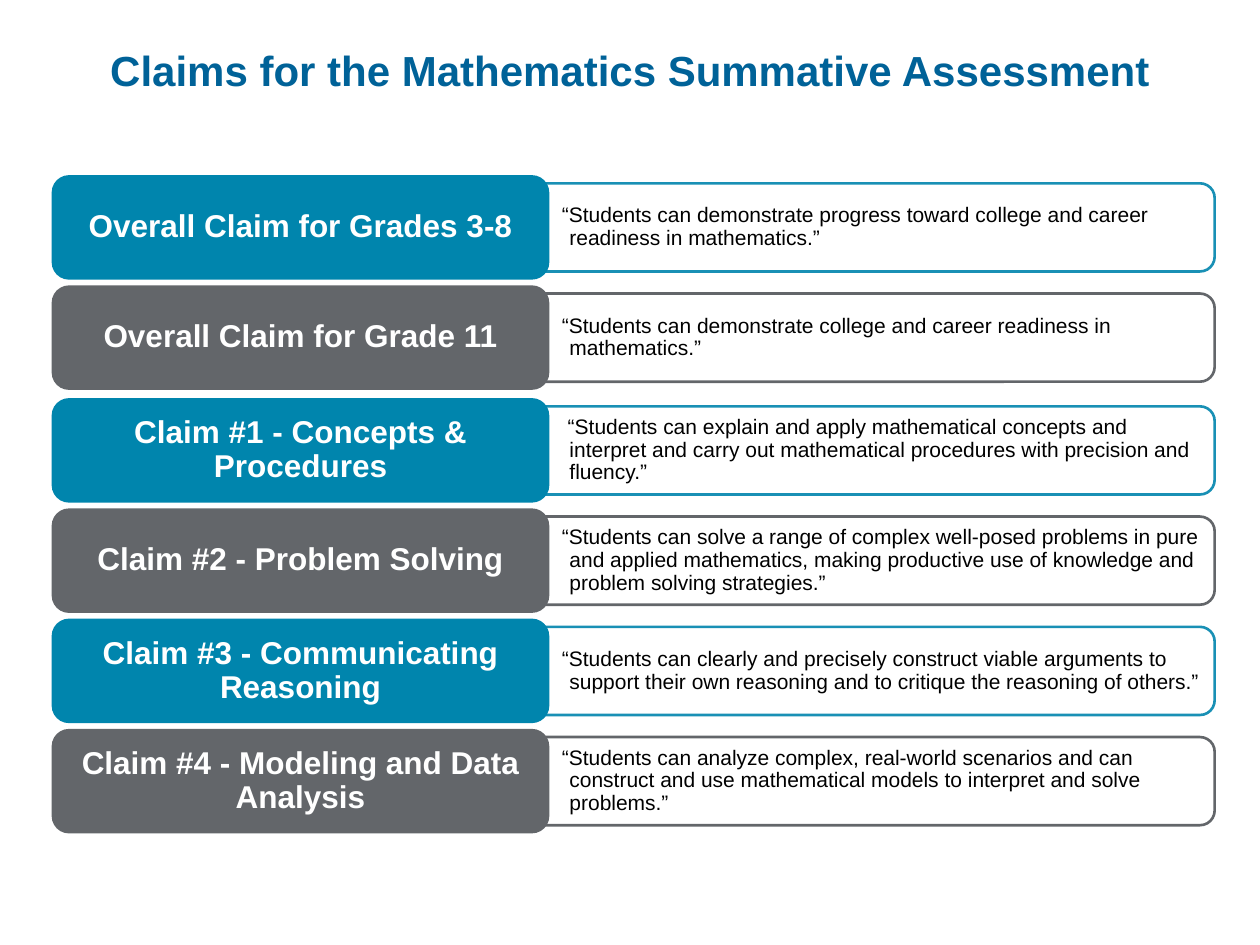
"""Build the slide of claims for the mathematics summative assessment."""
from lxml.etree import SubElement
from pptx import Presentation
from pptx.dml.color import RGBColor
from pptx.enum.shapes import MSO_SHAPE
from pptx.enum.text import MSO_ANCHOR, PP_ALIGN
from pptx.oxml.ns import qn
from pptx.util import Inches, Pt

THEME = {
    "font": "Arial",
    "teal": RGBColor.from_string("0085AD"),
    "gray": RGBColor.from_string("63666A"),
    "blue": RGBColor.from_string("006298"),
    "white": RGBColor.from_string("FFFFFF"),
    "black": RGBColor.from_string("000000"),
    "title": Pt(24),
    "label": Pt(18),
    "body": Pt(12),
    "outline": Pt(1.5),
}
CLAIMS = [
    ("Overall Claim for Grades 3-8",
     "“Students can demonstrate progress toward college and career readiness in mathematics.”"),
    ("Overall Claim for Grade 11",
     "“Students can demonstrate college and career readiness in mathematics.”"),
    ("Claim #1 - Concepts & Procedures",
     " “Students can explain and apply mathematical concepts and interpret and carry out "
     "mathematical procedures with precision and fluency.”"),
    ("Claim #2 - Problem Solving",
     "“Students can solve a range of complex well-posed problems in pure and applied mathematics, "
     "making productive use of knowledge and problem solving strategies.”"),
    ("Claim #3 - Communicating Reasoning",
     "“Students can clearly and precisely construct viable arguments to support their own "
     "reasoning and to critique the reasoning of others.”"),
    ("Claim #4 - Modeling and Data Analysis",
     "“Students can analyze complex, real-world scenarios and can construct and use "
     "mathematical models to interpret and solve problems.”"),
]

prs = Presentation()
prs.slide_width, prs.slide_height = Inches(10), Inches(7.5)
s = prs.slides.add_slide(prs.slide_layouts[6])
COL, ROW = prs.slide_width / 100, prs.slide_height / 75


def add_shape(kind, mid_x, mid_y, cols, rows, fill, line=None):
    w, h = int(cols * COL), int(rows * ROW)
    sp = s.shapes.add_shape(kind, int(mid_x * COL) - w // 2, int(mid_y * ROW) - h // 2, w, h)
    sp.shadow.inherit = False
    sp.fill.solid()
    sp.fill.fore_color.rgb = fill
    if line is None:
        sp.line.fill.background()
    else:
        sp.line.color.rgb = line
        sp.line.width = THEME["outline"]
    return sp


def add_text(text, left, mid_y, cols, rows, frame, para, font, color):
    box = s.shapes.add_textbox(int(left * COL), int((mid_y - rows / 2) * ROW),
                               int(cols * COL), int(rows * ROW))
    tf = box.text_frame
    p = tf.paragraphs[0]
    r = p.add_run()
    r.text = text
    formats = [(tf, {"word_wrap": True, **frame}), (p, para),
               (r.font, {"name": THEME["font"], **font})]
    for target, values in formats:
        for name, value in values.items():
            setattr(target, name, value)
    r.font.color.rgb = color
    return p


label_frame = {"vertical_anchor": MSO_ANCHOR.MIDDLE}
label_para = {"alignment": PP_ALIGN.CENTER, "line_spacing": 0.9}
label_font = {"size": THEME["label"], "bold": True}
body_frame = {"vertical_anchor": MSO_ANCHOR.MIDDLE, "margin_left": Inches(0.4),
              "margin_right": Inches(0.05), "margin_top": Inches(0.03),
              "margin_bottom": Inches(0.03)}
body_para = {"alignment": PP_ALIGN.LEFT, "line_spacing": 0.9}
body_font = {"size": THEME["body"]}

for i, (label, claim) in enumerate(CLAIMS):
    mid = 18.05 + 8.75 * i + (0.2 if i > 1 else 0)
    color = THEME["gray" if i % 2 else "teal"]
    panel = add_shape(MSO_SHAPE.ROUND_2_SAME_RECTANGLE, 68.5, mid, 7, 55.8, THEME["white"], color)
    panel.rotation = 90
    if color == THEME["teal"]:
        clr = panel.line._ln.find(qn("a:solidFill")).find(qn("a:srgbClr"))
        SubElement(clr, qn("a:alpha")).set("val", "90000")
    p = add_text(claim, 40.6, mid, 55.5, 6.3, body_frame, body_para, body_font, THEME["black"])
    pPr = p._p.get_or_add_pPr()
    pPr.set("marL", str(Inches(0.06)))
    pPr.set("indent", str(-Inches(0.06)))
    add_shape(MSO_SHAPE.ROUNDED_RECTANGLE, 23.85, mid, 39.5, 8.3, color)
    add_text(label, 4.6, mid, 38.5, 7.5, label_frame, label_para, label_font, THEME["white"])

add_text("Claims for the Mathematics Summative Assessment", 5, 9.25, 90, 12.5,
         {"vertical_anchor": MSO_ANCHOR.TOP}, {"alignment": PP_ALIGN.CENTER},
         {"size": THEME["title"], "bold": True}, THEME["blue"])

prs.save("out.pptx")
